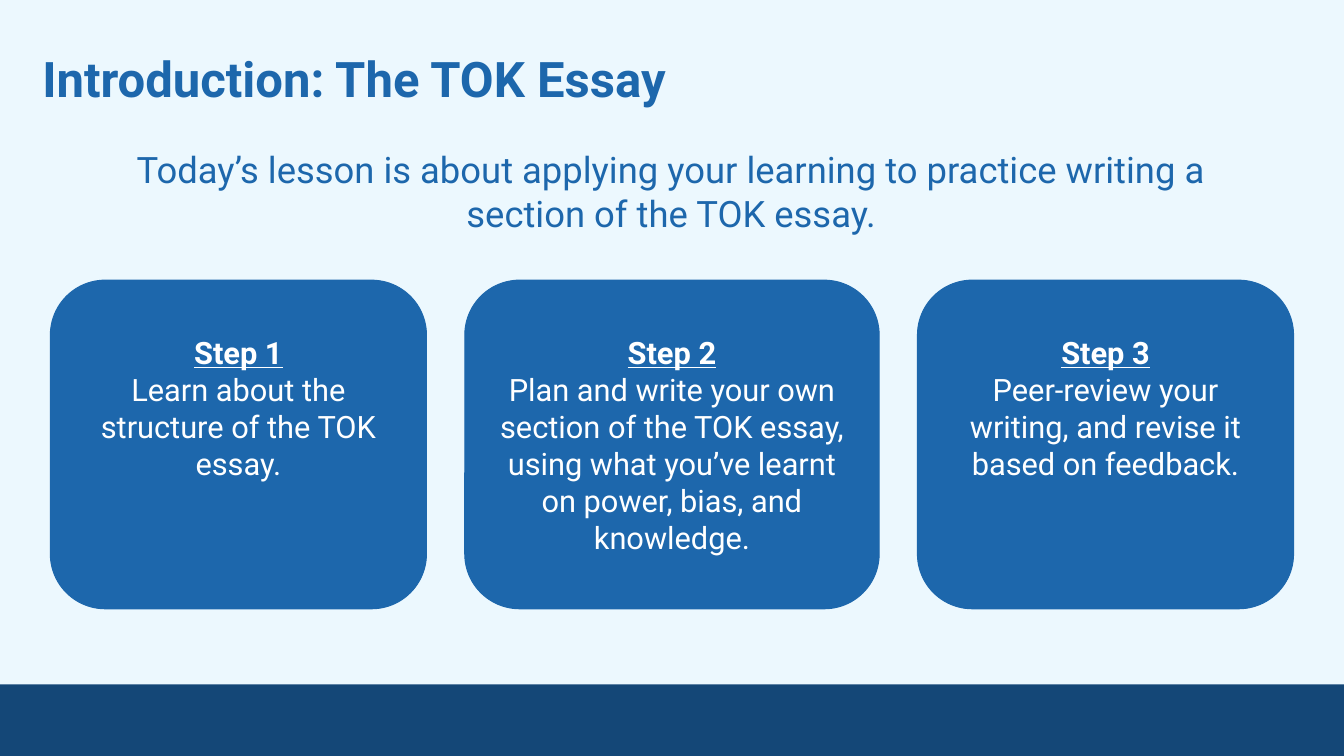
from dataclasses import dataclass

from pptx import Presentation
from pptx import util as u
from pptx.dml.color import RGBColor
from pptx.enum import shapes, text

PX = 9144  # EMU per px, 100 px to the inch


@dataclass(frozen=True)
class Theme:
    font: str = "Roboto"
    background: str = "ECF8FE"
    blue: str = "1D67AC"
    navy: str = "144777"
    white: str = "FFFFFF"
    title_size: int = 35
    lead_size: int = 26
    card_size: int = 22


@dataclass(frozen=True)
class Box:
    left: int
    top: int
    width: int
    height: int

    def emu(self) -> list[int]:
        return [side * PX for side in (self.left, self.top, self.width, self.height)]


@dataclass(frozen=True)
class Step:
    heading: str
    body: str
    width: int


THEME = Theme()
WIDTH, HEIGHT = 1333, 750
CARD_LEFT, CARD_TOP, CARD_HEIGHT, CARD_GAP = 50, 278, 326, 38
STEPS = [
    Step("Step 1", "Learn about the structure of the TOK essay.", 373),
    Step("Step 2", "Plan and write your own section of the TOK essay, using what "
         "you’ve learnt on power, bias, and knowledge.", 411),
    Step("Step 3", "Peer-review your writing, and revise it based on feedback.", 373),
]


def set_frame(frame, inset: int, top_inset: int) -> None:
    values = {
        "word_wrap": True,
        "auto_size": text.MSO_AUTO_SIZE.NONE,
        "vertical_anchor": text.MSO_ANCHOR.TOP,
        "margin_left": inset * PX,
        "margin_right": inset * PX,
        "margin_top": top_inset * PX,
        "margin_bottom": inset * PX,
    }
    for name, value in values.items():
        setattr(frame, name, value)


def write(para, words: str, size: int, color: str, align, **style: bool) -> None:
    para.alignment = align
    span = para.add_run()
    span.text = words
    values = {"name": THEME.font, "size": u.Pt(size), "bold": False, **style}
    for name, value in values.items():
        setattr(span.font, name, value)
    span.font.color.rgb = RGBColor.from_string(color)


def add_block(page, kind, box: Box, color: str):
    block = page.shapes.add_shape(kind, *box.emu())
    block.shadow.inherit = False
    block.fill.solid()
    block.fill.fore_color.rgb = RGBColor.from_string(color)
    block.line.fill.background()
    return block


def add_card(page, step: Step, left: int) -> None:
    box = Box(left, CARD_TOP, step.width, CARD_HEIGHT)
    card = add_block(page, shapes.MSO_SHAPE.ROUNDED_RECTANGLE, box, THEME.blue)
    card.adjustments[0] = 0.167
    card.line.color.rgb = RGBColor.from_string(THEME.blue)
    card.line.width = u.Pt(0.75)
    frame = card.text_frame
    set_frame(frame, 10, 37)
    center = text.PP_ALIGN.CENTER
    write(frame.paragraphs[0], step.heading, THEME.card_size, THEME.white, center,
          bold=True, underline=True)
    write(frame.add_paragraph(), step.body, THEME.card_size, THEME.white, center)


def main() -> None:
    deck = Presentation()
    deck.slide_width, deck.slide_height = WIDTH * PX, HEIGHT * PX
    page = deck.slides.add_slide(deck.slide_layouts.get_by_name("Title Only"))
    page.background.fill.solid()
    page.background.fill.fore_color.rgb = RGBColor.from_string(THEME.background)

    # Footer band
    add_block(page, shapes.MSO_SHAPE.RECTANGLE, Box(0, 679, WIDTH, HEIGHT - 679), THEME.navy)

    # Title
    title = page.shapes.title
    title.left, title.top, title.width, title.height = Box(29, 35, 1219, 86).emu()
    set_frame(title.text_frame, 13, 13)
    write(title.text_frame.paragraphs[0], "Introduction: The TOK Essay",
          THEME.title_size, THEME.blue, text.PP_ALIGN.LEFT, bold=True)

    # Lesson aim
    aim = page.shapes.add_textbox(*Box(91, 136, 1150, 108).emu())
    set_frame(aim.text_frame, 10, 10)
    write(aim.text_frame.paragraphs[0],
          "Today’s lesson is about applying your learning to practice writing a "
          "section of the TOK essay.",
          THEME.lead_size, THEME.blue, text.PP_ALIGN.CENTER)

    # Step cards
    left = CARD_LEFT
    for step in STEPS:
        add_card(page, step, left)
        left += step.width + CARD_GAP

    deck.save("out.pptx")


if __name__ == "__main__":
    main()
